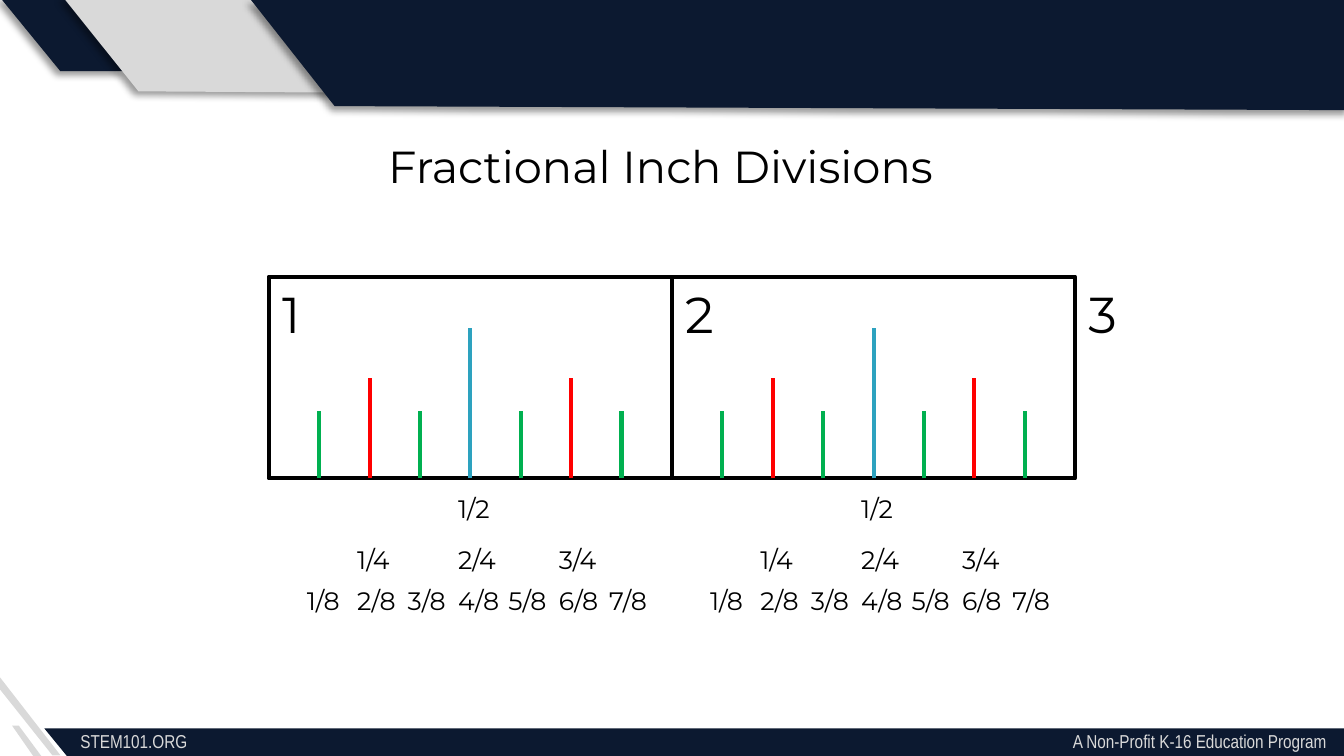
from dataclasses import dataclass

from lxml.etree import SubElement
from pptx import Presentation
from pptx.dml.color import RGBColor
from pptx.enum.shapes import MSO_CONNECTOR, MSO_SHAPE
from pptx.enum.text import MSO_ANCHOR, MSO_AUTO_SIZE, PP_ALIGN
from pptx.oxml.ns import qn
from pptx.util import Inches, Pt


@dataclass(frozen=True)
class Theme:
    """Colours, fonts and type sizes of the slide."""
    navy: str = "0C1930"
    grey: str = "D9D9D9"
    black: str = "000000"
    blue: str = "2DA2BF"
    red: str = "FF0000"
    green: str = "00B050"
    font: str = "Montserrat"
    footer_font: str = "Arial Narrow"
    title_size: float = 24
    number_size: float = 27
    fraction_size: float = 13.5
    footer_size: float = 10
    line_width: float = 2.25


class SlideBuilder:
    """Draws styled elements on one slide."""

    def __init__(self, slide, theme):
        self.slide = slide
        self.theme = theme

    def format_text(self, shape, text, size, color, font):
        """Write text into a shape and format its run."""
        frame = shape.text_frame
        frame.text = text
        frame.word_wrap = True
        frame.auto_size = MSO_AUTO_SIZE.NONE
        frame.vertical_anchor = MSO_ANCHOR.TOP
        for run in frame.paragraphs[0].runs:
            run.font.size = Pt(size)
            run.font.name = font
            run.font.color.rgb = RGBColor.from_string(color)

    def title(self, text, left, top, width, height):
        """Place and format the title placeholder."""
        shape = self.slide.shapes.title
        shape.left, shape.top = Inches(left), Inches(top)
        shape.width, shape.height = Inches(width), Inches(height)
        self.format_text(shape, text, self.theme.title_size, self.theme.black, self.theme.font)
        shape.text_frame.paragraphs[0].alignment = PP_ALIGN.CENTER

    def text(self, text, left, top, width, height, size, color=None, font=None):
        """Add a text box."""
        shape = self.slide.shapes.add_textbox(
            Inches(left), Inches(top), Inches(width), Inches(height))
        self.format_text(shape, text, size, color or self.theme.black, font or self.theme.font)
        return shape

    def footer(self, left_text, right_text):
        """Add a footer whose second part ends at a right tab."""
        theme = self.theme
        shape = self.text(f"{left_text}\t{right_text}", 0.5, 5.38, 9.5, 0.27,
                          theme.footer_size, theme.grey, theme.footer_font)
        properties = shape.text_frame.paragraphs[0]._p.get_or_add_pPr()
        tabs = SubElement(properties, qn("a:tabLst"))
        SubElement(tabs, qn("a:tab"), pos=str(Inches(9.27)), algn="r")

    def polygon(self, points, color, shadow=False):
        """Add a filled outline, with a soft shadow on request."""
        corners = [(Inches(x), Inches(y)) for x, y in points]
        builder = self.slide.shapes.build_freeform(*corners[0], scale=1.0)
        builder.add_line_segments(corners[1:], close=True)
        shape = builder.convert_to_shape()
        shape.fill.solid()
        shape.fill.fore_color.rgb = RGBColor.from_string(color)
        shape.line.fill.background()
        shape.shadow.inherit = False
        if shadow:
            effects = shape._element.spPr.find(qn("a:effectLst"))
            outer = SubElement(effects, qn("a:outerShdw"), blurRad=str(Pt(4)),
                               dist=str(Pt(3)), dir="8100000", rotWithShape="0")
            shade = SubElement(outer, qn("a:srgbClr"), val=self.theme.black)
            SubElement(shade, qn("a:alpha"), val="40000")

    def frame(self, left, top, width, height):
        """Add an unfilled rectangle."""
        shape = self.slide.shapes.add_shape(
            MSO_SHAPE.RECTANGLE, Inches(left), Inches(top), Inches(width), Inches(height))
        shape.fill.background()
        shape.line.color.rgb = RGBColor.from_string(self.theme.black)
        shape.line.width = Pt(self.theme.line_width)
        shape.shadow.inherit = False
        return shape

    def vertical_line(self, x, start, end, color):
        """Add a straight vertical line."""
        line = self.slide.shapes.add_connector(
            MSO_CONNECTOR.STRAIGHT, Inches(x), Inches(start), Inches(x), Inches(end))
        line.line.color.rgb = RGBColor.from_string(color)
        line.line.width = Pt(self.theme.line_width)
        SubElement(line._element.spPr, qn("a:effectLst"))
        return line


def draw_background(builder):
    """Draw the header bands and the footer."""
    theme = builder.theme
    bands = [
        ([(0, -0.02), (0.48, -0.02), (0.93, 0.53), (0.45, 0.53)], theme.navy),
        ([(0.47, -0.02), (2.04, -0.02), (2.59, 0.69), (1.03, 0.68)], theme.grey),
        ([(1.86, -0.01), (10.02, -0.01), (10.04, 0.82), (2.49, 0.79)], theme.navy),
    ]
    for points, color in bands:
        builder.polygon(points, color, shadow=True)
    builder.polygon([(0.31, 5.63), (0.25, 5.63), (0.09, 5.4), (0.14, 5.4)], theme.grey)
    builder.polygon([(0.45, 5.62), (0.39, 5.62), (0, 5.13), (0, 5.04)], theme.grey)
    builder.polygon([(10.06, 5.65), (0.51, 5.64), (0.33, 5.42), (10.07, 5.42)], theme.navy)
    builder.footer("STEM101.ORG", "A Non-Profit K-16 Education Program")


def draw_ruler(builder):
    """Draw a two-inch ruler with its ticks and fractions."""
    theme = builder.theme
    left, top, inch_width, height = 2, 2.06, 3, 1.5
    bottom = top + height
    inch_starts = [left, left + inch_width]
    divisions = [
        (2, theme.blue, 1.12, 3.62),
        (4, theme.red, 0.75, 4),
        (8, theme.green, 0.5, 4.31),
    ]

    ruler = builder.frame(left, top, 2 * inch_width, height)
    divider = builder.vertical_line(inch_starts[1], top, bottom, theme.black)
    divider.begin_connect(ruler, 0)
    divider.end_connect(ruler, 2)

    for index in range(3):
        builder.text(str(index + 1), left + index * inch_width, top, 0.38, 0.56,
                     theme.number_size)

    for start in inch_starts:
        for denominator, color, tick_height, label_top in divisions:
            for numerator in range(1, denominator):
                x = start + inch_width * numerator / denominator
                if numerator % 2:
                    builder.vertical_line(x, bottom, bottom - tick_height, color)
                builder.text(f"{numerator}/{denominator}", x - 0.19, label_top, 0.56, 0.33,
                             theme.fraction_size)


def main():
    """Build and save the presentation."""
    presentation = Presentation()
    presentation.slide_width = Inches(10)
    presentation.slide_height = Inches(10 * 9 / 16)
    slide = presentation.slides.add_slide(presentation.slide_layouts[5])
    builder = SlideBuilder(slide, Theme())
    draw_background(builder)
    draw_ruler(builder)
    builder.title("Fractional Inch Divisions", 1.06, 0.98, 7.71, 0.5)
    presentation.save("out.pptx")


if __name__ == "__main__":
    main()
